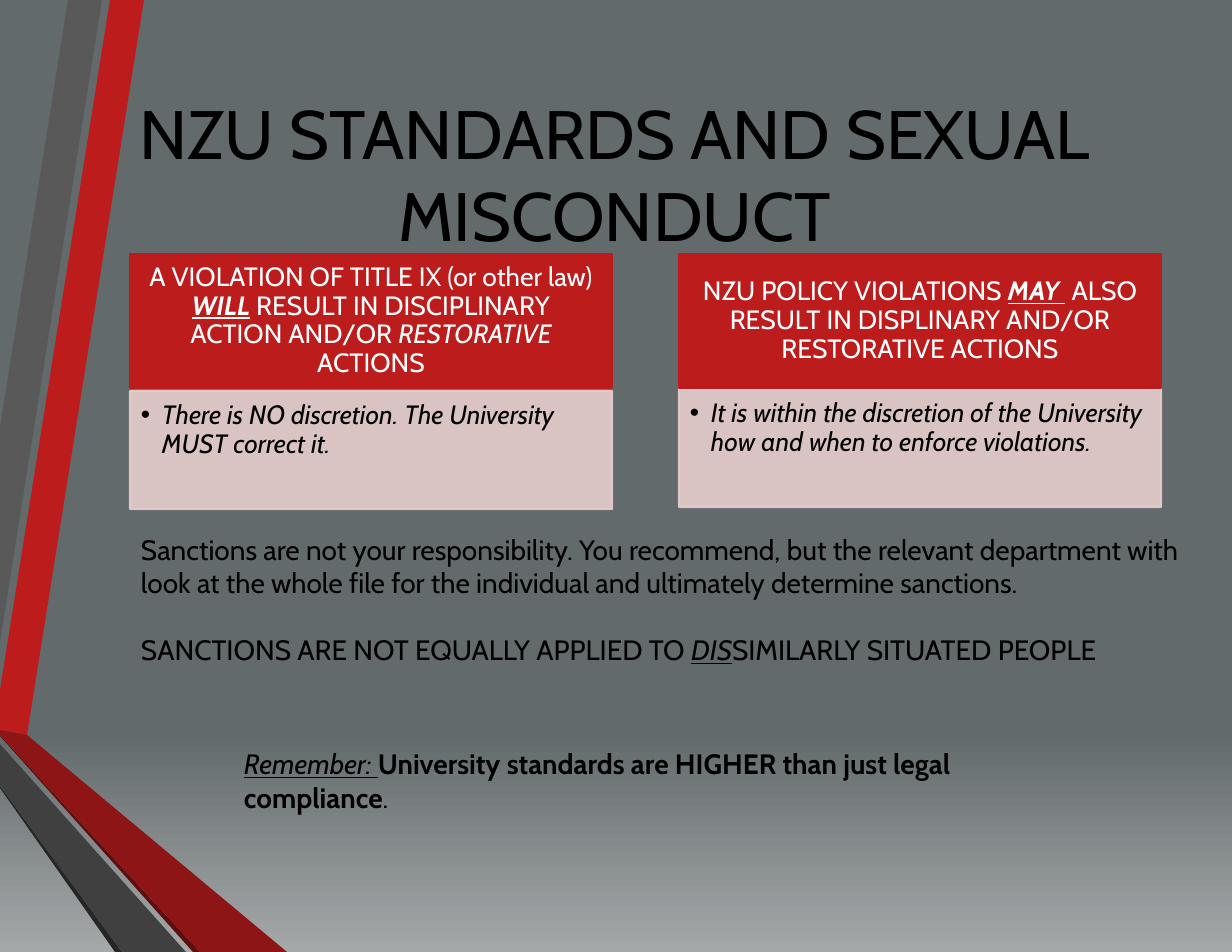
"""Build the slide on university standards and sexual misconduct."""
from lxml.etree import SubElement
from pptx import Presentation
from pptx.dml.color import RGBColor
from pptx.enum.shapes import MSO_SHAPE as Preset
from pptx.enum.text import MSO_ANCHOR as Anchor, MSO_AUTO_SIZE as AutoSize, PP_ALIGN as Align
from pptx.oxml.ns import qn
from pptx.util import Pt

PX = 914400 / 112
FONT = "Cabin"
BLACK = RGBColor(0x00, 0x00, 0x00)
WHITE = RGBColor(0xFF, 0xFF, 0xFF)
RED = RGBColor(0xBC, 0x1C, 0x1C)
DARK_RED = RGBColor(0x8D, 0x15, 0x15)
DEEP_RED = RGBColor(0x5E, 0x0E, 0x0E)
PINK = RGBColor(0xE7, 0xCD, 0xCD)
GREY = RGBColor(0x59, 0x59, 0x59)
DARK_GREY = RGBColor(0x40, 0x40, 0x40)
DEEP_GREY = RGBColor(0x26, 0x26, 0x26)
SLATE = RGBColor(0x63, 0x6A, 0x6C)
SILVER = RGBColor(0xA5, 0xA8, 0xA9)

RIBBONS = [
    (RED, [(0, 690), (0, 730), (27, 735), (144, 0), (110, 0)]),
    (GREY, [(102, 0), (68, 0), (0, 427), (0, 642)]),
    (DEEP_GREY, [(0, 786), (0, 788), (115, 952), (122, 952)]),
    (DEEP_RED, [(0, 735), (0, 736), (193, 952), (200, 952)]),
    (DARK_RED, [(0, 735), (200, 952), (287, 952), (27, 735), (0, 730)]),
    (DARK_GREY, [(0, 786), (122, 952), (186, 952), (0, 744)]),
]
COLUMNS = [
    (130, 391,
     [("A VIOLATION OF TITLE IX (or other law) ", ""), ("WILL", "biu"),
      (" RESULT IN DISCIPLINARY ACTION AND/OR ", ""), ("RESTORATIVE ", "i"), ("ACTIONS", "")],
     "There is NO discretion. The University MUST correct it."),
    (679, 389,
     [("NZU POLICY VIOLATIONS ", ""), ("MAY ", "biu"),
      (" ALSO RESULT IN DISPLINARY AND/OR RESTORATIVE ACTIONS", "")],
     "It is within the discretion of the University how and when to enforce violations."),
]
SANCTIONS = [
    [("Sanctions are not your responsibility. You recommend, but the relevant department with "
      "look at the whole file for the individual and ultimately determine sanctions.", "")],
    [("SANCTIONS ARE NOT EQUALLY APPLIED TO ", ""), ("DIS", "iu"),
     ("SIMILARLY SITUATED PEOPLE", "")],
]
REMINDER = [[("Remember: ", "iu"),
             ("University standards are HIGHER than just legal compliance", "b"), (".", "")]]


def px(value):
    return round(value * PX)


def write(shape, paragraphs, size=18, color=BLACK, align=Align.LEFT, anchor=Anchor.TOP,
          spacing=None, gap=0, insets=(11, 6, 11, 6)):
    frame = shape.text_frame
    frame.word_wrap = True
    frame.auto_size = AutoSize.NONE
    frame.vertical_anchor = anchor
    frame.margin_left, frame.margin_top, frame.margin_right, frame.margin_bottom = map(px, insets)
    for index, runs in enumerate(paragraphs):
        paragraph = frame.add_paragraph() if index else frame.paragraphs[0]
        paragraph.alignment = align
        paragraph.line_spacing = spacing
        paragraph.space_before = Pt(gap if index else 0)
        paragraph.space_after = Pt(0)
        for text, style in runs:
            run = paragraph.add_run()
            run.text = text
            font = run.font
            font.name, font.size, font.color.rgb = FONT, Pt(size), color
            font.bold, font.italic, font.underline = (mark in style for mark in "biu")


class SlideBuilder:
    """Holds the current slide and draws each kind of element in its style."""

    def __init__(self, presentation):
        self.slide = presentation.slides.add_slide(presentation.slide_layouts[3])

    def background(self):
        fill = self.slide.background.fill
        fill.gradient()
        fill.gradient_angle = 270
        for stop, color, position in zip(fill.gradient_stops, (SLATE, SILVER), (0.77, 1)):
            stop.color.rgb, stop.position = color, position

    def place(self, shape, *box):
        shape.left, shape.top, shape.width, shape.height = map(px, box)

    def paint(self, shape, color, opacity=100):
        shape.fill.solid()
        shape.fill.fore_color.rgb = color
        shape.line.color.rgb = color
        shape.line.width = Pt(1.5)
        if opacity < 100:
            for node in shape._element.spPr.iter(qn("a:srgbClr")):
                SubElement(node, qn("a:alpha"), val=str(opacity * 1000))

    def ribbon(self, color, points):
        builder = self.slide.shapes.build_freeform(*points[0], scale=PX)
        builder.add_line_segments(points[1:], close=True)
        shape = builder.convert_to_shape()
        shape.shadow.inherit = False
        shape.fill.solid()
        shape.fill.fore_color.rgb = color
        shape.line.fill.background()

    def title(self, text):
        title = self.slide.shapes.title
        self.place(title, 114, 80, 1002, 175)
        write(title, [[(text, "")]], size=44, align=Align.CENTER, anchor=Anchor.MIDDLE,
              spacing=Pt(52.2), insets=(0, 12, 0, 0))

    def header(self, left, runs):
        shape = self.slide.shapes.add_shape(Preset.RECTANGLE, *map(px, (left, 254, 482, 134)))
        shape.shadow.inherit = False
        self.paint(shape, RED)
        write(shape, [runs], size=17, color=WHITE, align=Align.CENTER, anchor=Anchor.MIDDLE,
              spacing=0.9, insets=(15, 9, 15, 9))

    def bullet_panel(self, index, left, top, text):
        panel = self.slide.placeholders[index]
        self.place(panel, left, top, 482, 118)
        self.paint(panel, PINK, opacity=90)
        write(panel, [[(text, "i")]], size=17, spacing=0.9, insets=(11, 11, 15, 17))
        properties = panel.text_frame.paragraphs[0]._p.get_or_add_pPr()
        properties.set("marL", str(px(21)))
        properties.set("indent", str(-px(21)))
        SubElement(properties, qn("a:buChar"), char="•")

    def text(self, paragraphs, *box, gap=0):
        write(self.slide.shapes.add_textbox(*map(px, box)), paragraphs, gap=gap)


def main():
    presentation = Presentation()
    presentation.slide_width, presentation.slide_height = px(1232), px(952)
    builder = SlideBuilder(presentation)
    builder.background()
    for color, points in RIBBONS:
        builder.ribbon(color, points)
    builder.title("NZU STANDARDS AND SEXUAL MISCONDUCT")
    builder.text(REMINDER, 233, 741, 877, 80)
    for index, (left, top, heading, detail) in enumerate(COLUMNS, 1):
        builder.header(left, heading)
        builder.bullet_panel(index, left, top, detail)
    builder.text(SANCTIONS, 130, 526, 1083, 181, gap=21.6)
    presentation.save("out.pptx")


if __name__ == "__main__":
    main()
